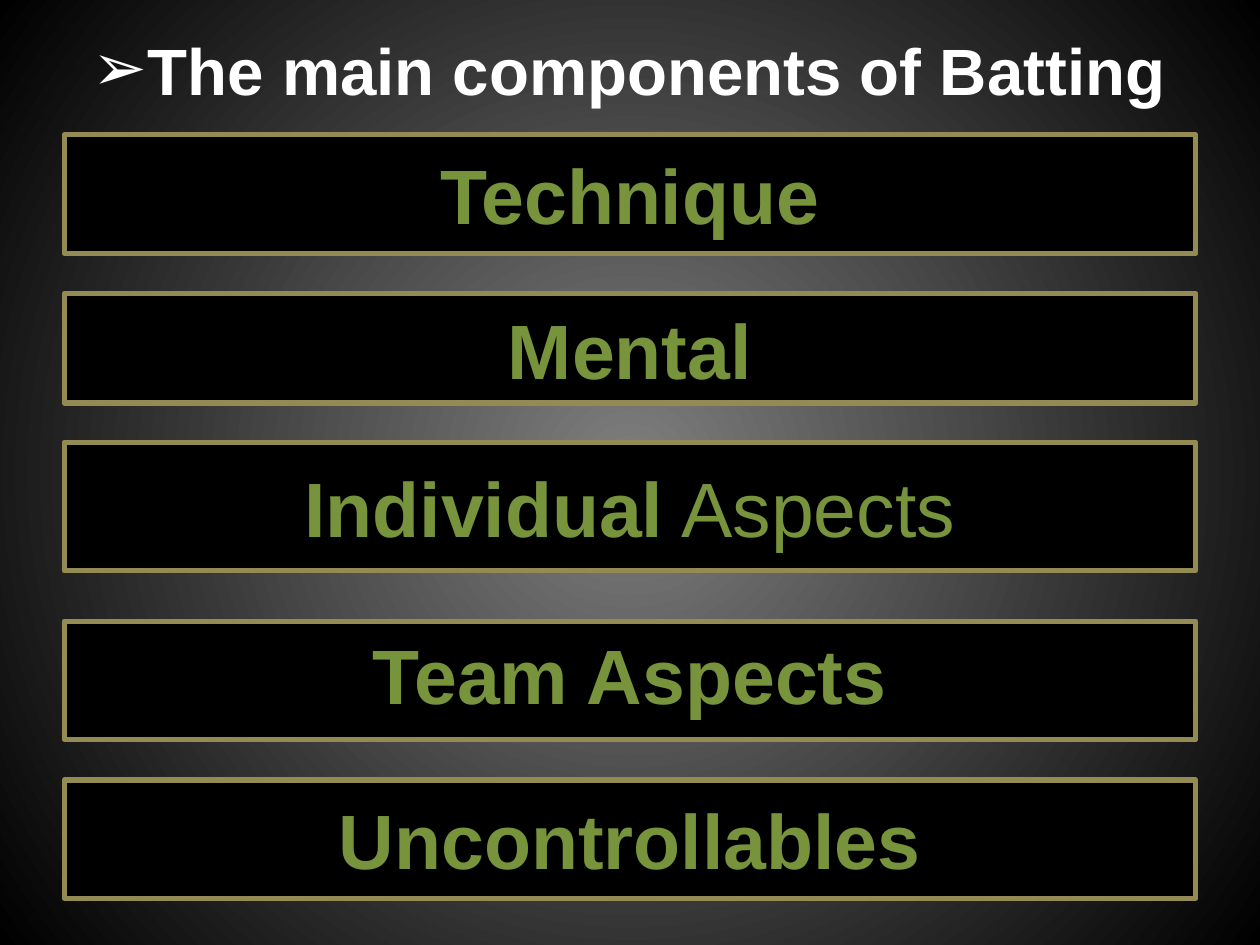
from lxml import etree
from pptx import Presentation
from pptx import util as u
from pptx.dml.color import RGBColor
from pptx.enum import shapes, text
from pptx.oxml import ns

theme = {
    "font": "Arial", "fill": "000000", "line": "948A54", "label": "77933C",
    "head": "FFFFFF", "glow": "7F7F7F", "big": 44, "mid": 37.4, "edge": 3,
}

deck = Presentation()
deck.slide_width, deck.slide_height = u.Inches(10), u.Inches(7.5)
slide = deck.slides.add_slide(deck.slide_layouts[0])
unit = deck.slide_width / 100
left, wide = 5.1, 89.8


def place(box, top, high):
    spot = {"left": left, "top": top, "width": wide, "height": high}
    for name, size in spot.items():
        setattr(box, name, u.Emu(round(size * unit)))


def write(box, parts, tint, size, anchor):
    frame = box.text_frame
    form = {"word_wrap": True, "auto_size": text.MSO_AUTO_SIZE.NONE,
            "vertical_anchor": anchor}
    for name, value in form.items():
        setattr(frame, name, value)
    para = frame.paragraphs[0]
    para.alignment = text.PP_ALIGN.CENTER
    for words, bold in parts:
        run = para.add_run()
        run.text = words
        face = {"name": theme["font"], "size": u.Pt(size), "bold": bold}
        for name, value in face.items():
            setattr(run.font, name, value)
        run.font.color.rgb = RGBColor.from_string(tint)
    return para


back = slide.background.fill
back.gradient()
for stop, tint in zip(back.gradient_stops, ("glow", "fill")):
    stop.color.rgb = RGBColor.from_string(theme[tint])
grad = slide.background._cSld.find(".//" + ns.qn("a:gradFill"))
grad.remove(grad.find(ns.qn("a:lin")))
ring = etree.SubElement(grad, ns.qn("a:path"), {"path": "circle"})
etree.SubElement(ring, ns.qn("a:fillToRect"), dict.fromkeys("ltrb", "50000"))

mid, high = text.MSO_ANCHOR.MIDDLE, text.MSO_ANCHOR.TOP
bars = [
    (slide.shapes.title, 10.7, 9.4, [("Technique", True)], mid),
    (slide.placeholders[1], 49.3, 9.4, [("Team Aspects", True)], high),
    (None, 23.3, 8.7, [("Mental", True)], mid),
    (None, 35.1, 10.2, [("Individual", True), (" Aspects", False)], mid),
    (None, 61.9, 9.4, [("Uncontrollables", True)], mid),
]
for box, top, tall, parts, anchor in bars:
    if box is None:
        box = slide.shapes.add_shape(shapes.MSO_SHAPE.RECTANGLE, 0, 0, 0, 0)
        box.shadow.inherit = False
    place(box, top, tall)
    box.fill.solid()
    box.fill.fore_color.rgb = RGBColor.from_string(theme["fill"])
    box.line.color.rgb = RGBColor.from_string(theme["line"])
    box.line.width = u.Pt(theme["edge"])
    write(box, parts, theme["label"], theme["big"], anchor)

head = slide.shapes.add_textbox(0, 0, 0, 0)
place(head, 2.9, 6.3)
para = write(head, [("The main components of Batting", True)],
             theme["head"], theme["mid"], mid)
para.line_spacing = 0.8
props = para._p.get_or_add_pPr()
etree.SubElement(props, ns.qn("a:buFont"), {"typeface": theme["font"]})
etree.SubElement(props, ns.qn("a:buChar"), {"char": "➢"})

deck.save("out.pptx")
